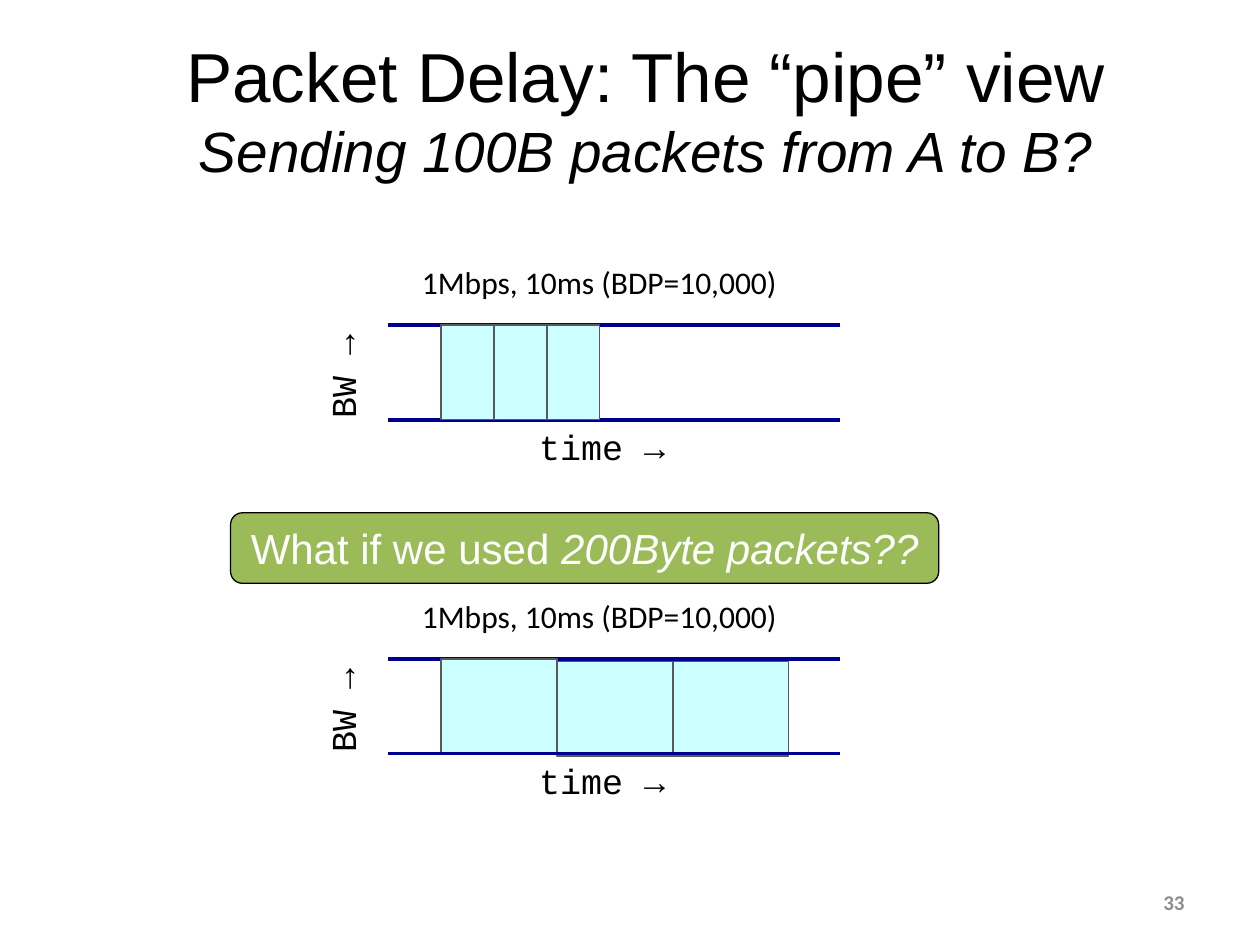
from dataclasses import dataclass

from lxml import etree
from pptx import Presentation
from pptx import util as u
from pptx.dml.color import RGBColor
from pptx.enum import shapes, text
from pptx.oxml.ns import qn


@dataclass(frozen=True)
class Theme:
    black: str = "000000"
    white: str = "FFFFFF"
    navy: str = "000090"
    packet: str = "CCFFFF"
    outline: str = "595959"
    green: str = "9BBB59"
    gray: str = "8C8C8C"
    sans: str = "Arial"
    body: str = "Calibri"
    mono: str = "Courier New"
    title_size: float = 39.6
    subtitle_size: float = 32.4
    question_size: float = 24
    axis_size: float = 20
    label_size: float = 18
    number_size: float = 12
    pipe_width: float = 2.25
    outline_width: float = 0.75


def color(value):
    return RGBColor.from_string(value)


def write(paragraph, content, font, size, fill, bold=False, italic=False):
    run = paragraph.add_run()
    run.text = content
    run.font.name = font
    run.font.size = u.Pt(size)
    run.font.color.rgb = color(fill)
    run.font.bold = bold
    run.font.italic = italic


class SlideBuilder:
    def __init__(self, slide, theme):
        self.slide = slide
        self.theme = theme

    def text_box(self, left, top, width, height, wrap=False, rotation=0,
                 align=text.PP_ALIGN.LEFT, anchor=text.MSO_ANCHOR.TOP, spacing=None):
        shape = self.slide.shapes.add_textbox(*map(u.Inches, (left, top, width, height)))
        shape.rotation = rotation
        frame = shape.text_frame
        frame.word_wrap = wrap
        frame.vertical_anchor = anchor
        paragraph = frame.paragraphs[0]
        paragraph.alignment = align
        paragraph.line_spacing = spacing
        return paragraph

    def box(self, left, top, width, height, fill, line,
            kind=shapes.MSO_SHAPE.RECTANGLE):
        shape = self.slide.shapes.add_shape(kind, *map(u.Inches, (left, top, width, height)))
        shape.shadow.inherit = False
        shape.fill.solid()
        shape.fill.fore_color.rgb = color(fill)
        shape.line.color.rgb = color(line)
        shape.line.width = u.Pt(self.theme.outline_width)
        return shape

    def wall(self, top):
        left, right = 3.08, 6.67
        line = self.slide.shapes.add_connector(
            shapes.MSO_CONNECTOR.STRAIGHT,
            *map(u.Inches, (left, top, right, top)))
        line.line.color.rgb = color(self.theme.navy)
        line.line.width = u.Pt(self.theme.pipe_width)
        etree.SubElement(line._element.spPr, qn("a:effectLst"))

    def pipe(self, top, packet_width, drops, wall_in_front=False):
        theme = self.theme
        height = 0.75
        label = self.text_box(3.25, top - 0.6, 3.48, 0.45, spacing=1.2)
        write(label, "1Mbps, 10ms (BDP=10,000)", theme.body, theme.label_size, theme.black)
        self.wall(top)
        if not wall_in_front:
            self.wall(top + height)
        time_axis = self.text_box(4.18, top + height, 1.32, 0.44)
        write(time_axis, "time →", theme.mono, theme.axis_size, theme.black)
        bandwidth_axis = self.text_box(2.23, top + 0.13, 0.98, 0.44, rotation=270)
        write(bandwidth_axis, "BW →", theme.mono, theme.axis_size, theme.black)
        for index, drop in enumerate(drops):
            self.box(3.5 + index * packet_width, top + drop, packet_width, height,
                     theme.packet, theme.outline)
        if wall_in_front:
            self.wall(top + height)

    def title(self):
        theme = self.theme
        paragraph = self.text_box(0.5, 0.22, 9.25, 1.28, wrap=True,
                                  align=text.PP_ALIGN.CENTER,
                                  anchor=text.MSO_ANCHOR.MIDDLE)
        write(paragraph, "Packet Delay: The “pipe” view",
              theme.sans, theme.title_size, theme.black)
        paragraph.add_line_break()
        write(paragraph, "Sending 100B packets from A to B?",
              theme.sans, theme.subtitle_size, theme.black, italic=True)

    def question(self):
        theme = self.theme
        shape = self.box(1.83, 4.07, 5.62, 0.56, theme.green, theme.black,
                         kind=shapes.MSO_SHAPE.ROUNDED_RECTANGLE)
        shape.text_frame.word_wrap = False
        shape.text_frame.vertical_anchor = text.MSO_ANCHOR.MIDDLE
        paragraph = shape.text_frame.paragraphs[0]
        paragraph.alignment = text.PP_ALIGN.CENTER
        for content, italic in (("What if we used ", False), ("200Byte packets??", True)):
            write(paragraph, content, theme.sans, theme.question_size, theme.white,
                  italic=italic)

    def slide_number(self, number):
        theme = self.theme
        paragraph = self.text_box(7.17, 6.96, 2.33, 0.4, wrap=True,
                                  align=text.PP_ALIGN.RIGHT,
                                  anchor=text.MSO_ANCHOR.MIDDLE)
        write(paragraph, number, theme.body, theme.number_size, theme.gray, bold=True)


def main():
    presentation = Presentation()
    presentation.slide_width = u.Inches(10)
    presentation.slide_height = u.Inches(7.5)
    slide = presentation.slides.add_slide(presentation.slide_layouts[6])
    builder = SlideBuilder(slide, Theme())
    builder.title()
    builder.pipe(2.58, packet_width=0.42, drops=(0, 0, 0))
    builder.question()
    builder.pipe(5.23, packet_width=0.92, drops=(0, 0.02, 0.02), wall_in_front=True)
    builder.slide_number("33")
    presentation.save("out.pptx")


if __name__ == "__main__":
    main()
